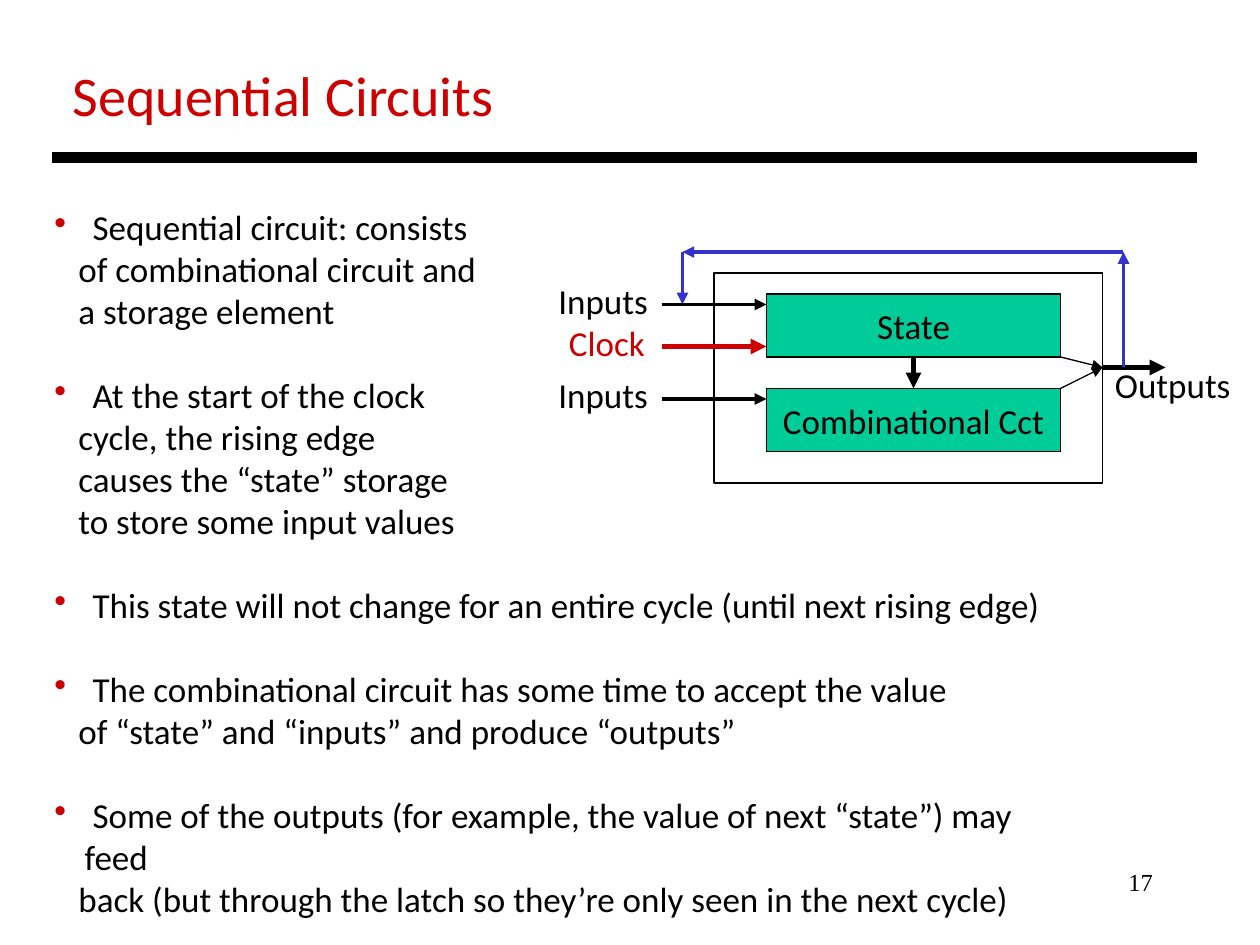
"""Build the Sequential Circuits slide on a grid of 120 columns by 90 rows."""
from lxml.etree import SubElement
from pptx import Presentation
from pptx.dml.color import RGBColor
from pptx.enum.shapes import MSO_CONNECTOR, MSO_SHAPE
from pptx.enum.text import MSO_ANCHOR, PP_ALIGN
from pptx.oxml.ns import qn
from pptx.util import Inches, Pt

BLACK, WHITE, RED, BLUE, GREEN = "000000", "FFFFFF", "CC0000", "3333CC", "00CC99"


def color(target, value):
    target.rgb = RGBColor.from_string(value)


def write(para, text, size=20, value=BLACK, font="Calibri"):
    span = para.add_run()
    span.text = text
    span.font.size = Pt(size)
    span.font.name = font
    color(span.font.color, value)


deck = Presentation()
deck.slide_width, deck.slide_height = Inches(10), Inches(7.5)
page = deck.slides.add_slide(deck.slide_layouts[6])
unit = deck.slide_width / 120

blocks = [
    (68, 26, 37, 20, WHITE, ""),
    (73, 28, 28, 6, GREEN, "State"),
    (73, 37, 28, 6, GREEN, "Combinational Cct"),
]
for left, top, width, height, fill, text in blocks:
    box = page.shapes.add_shape(
        MSO_SHAPE.RECTANGLE, *(int(n * unit) for n in (left, top, width, height)))
    box.shadow.inherit = False
    box.fill.solid()
    color(box.fill.fore_color, fill)
    color(box.line.color, BLACK)
    box.line.width = Pt(0.75)
    if text:
        frame = box.text_frame
        frame.word_wrap = False
        frame.vertical_anchor = MSO_ANCHOR.MIDDLE
        frame.paragraphs[0].alignment = PP_ALIGN.CENTER
        write(frame.paragraphs[0], text)

lines = [
    (5, 15, 114, 15, BLACK, 6, False),
    (87, 34, 87, 37, BLACK, 3, True),
    (63, 33, 73, 33, RED, 3, True),
    (63, 38, 73, 38, BLACK, 2.25, True),
    (105, 35, 111, 35, BLACK, 3, True),
    (101, 34, 105, 35, BLACK, 0.75, True),
    (101, 37, 105, 35, BLACK, 0.75, True),
    (107, 35, 107, 24, BLUE, 2.25, True),
    (107, 24, 65, 24, BLUE, 2.25, True),
    (65, 24, 65, 29, BLUE, 2.25, True),
    (63, 29, 73, 29, BLACK, 2.25, True),
]
for *ends, value, weight, arrow in lines:
    line = page.shapes.add_connector(MSO_CONNECTOR.STRAIGHT, *(int(n * unit) for n in ends))
    color(line.line.color, value)
    line.line.width = Pt(weight)
    if arrow:
        SubElement(line.line._get_or_add_ln(), qn("a:tailEnd"), type="triangle")
    SubElement(line._element.spPr, qn("a:effectLst"))

labels = [
    (5.75, 5.2, 43, 7.7, "Sequential Circuits", 32, RED, "Calibri", PP_ALIGN.LEFT),
    (52, 26, 11, 5.25, "Inputs", 20, BLACK, "Calibri", PP_ALIGN.LEFT),
    (53, 30, 9.75, 5.25, "Clock", 20, RED, "Calibri", PP_ALIGN.LEFT),
    (52, 35, 11, 5.25, "Inputs", 20, BLACK, "Calibri", PP_ALIGN.LEFT),
    (105, 34, 14, 5.25, "Outputs", 20, BLACK, "Calibri", PP_ALIGN.LEFT),
    (86, 82, 25, 6, "17", 14, BLACK, "Times New Roman", PP_ALIGN.RIGHT),
]
for left, top, width, height, text, size, value, font, align in labels:
    box = page.shapes.add_textbox(*(int(n * unit) for n in (left, top, width, height)))
    box.text_frame.word_wrap = False
    para = box.text_frame.paragraphs[0]
    para.alignment = align
    write(para, text, size, value, font)

points = [
    ["Sequential circuit: consists", "of combinational circuit and", "a storage element"],
    ["At the start of the clock", "cycle, the rising edge",
     "causes the “state” storage", "to store some input values"],
    ["This state will not change for an entire cycle (until next rising edge)"],
    ["The combinational circuit has some time to accept the value",
     "of “state” and “inputs” and produce “outputs”"],
    ["Some of the outputs (for example, the value of next “state”) may feed",
     "back (but through the latch so they’re only seen in the next cycle)"],
]
box = page.shapes.add_textbox(*(int(n * unit) for n in (4, 19, 99, 66)))
frame = box.text_frame
frame.word_wrap = True
para = frame.paragraphs[0]
for number, point in enumerate(points):
    for row, text in enumerate(point):
        if number or row:
            para = frame.add_paragraph()
        para.line_spacing = Pt(24)
        layout = para._p.get_or_add_pPr()
        if row:
            layout.set("marL", str(Inches(0.19)))
            write(para, text)
            continue
        para.space_before = Pt(24 if number else 0)
        layout.set("marL", str(Inches(0.24)))
        layout.set("indent", str(-Inches(0.24)))
        SubElement(SubElement(layout, qn("a:buClr")), qn("a:srgbClr"), val=RED)
        SubElement(layout, qn("a:buChar"), char="•")
        write(para, " " + text)

deck.save("out.pptx")
